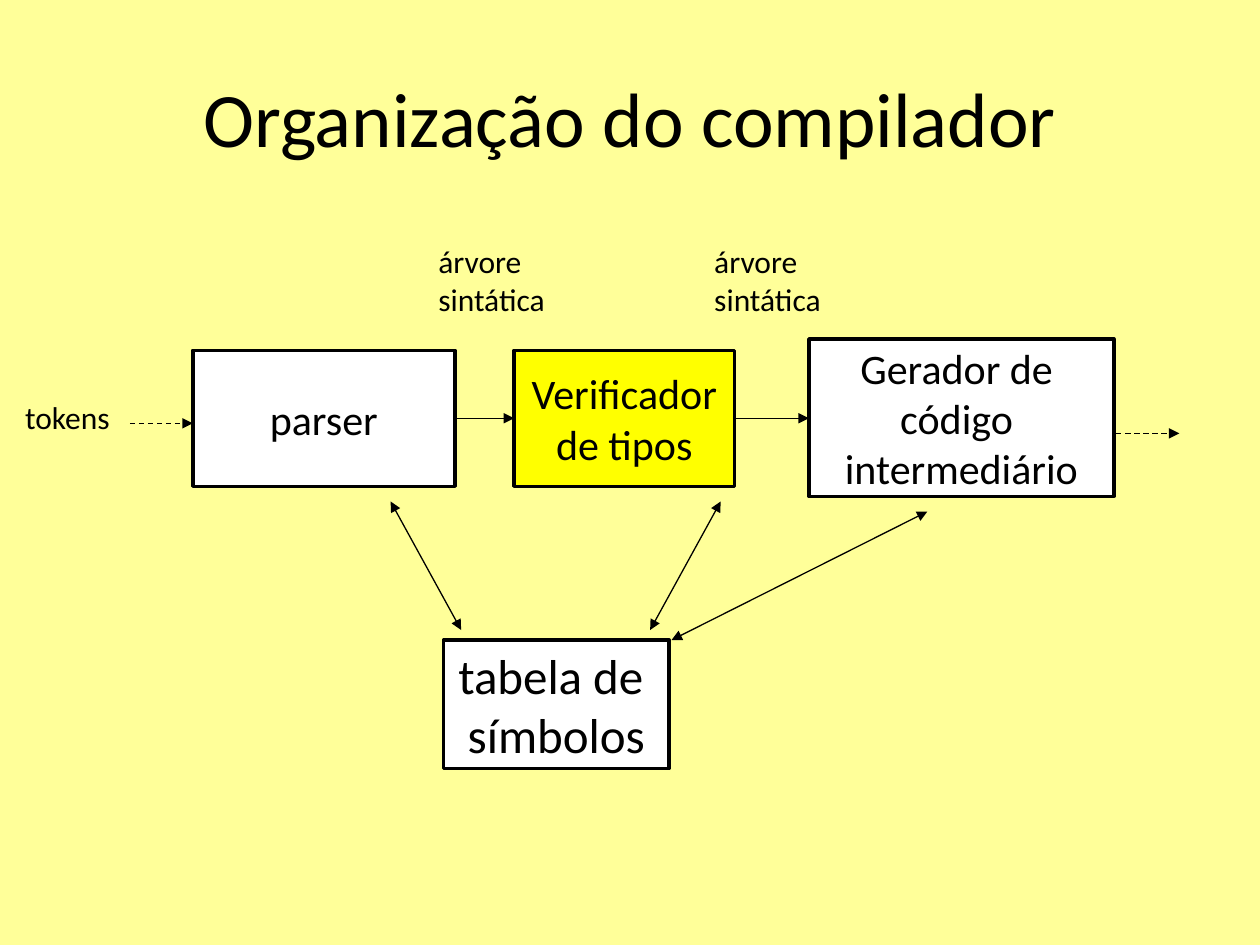
"""Build the slide on how the compiler is organised."""
from lxml import etree
from pptx import Presentation
from pptx import util as u
from pptx.dml.color import RGBColor
from pptx.enum import dml, shapes, text
from pptx.oxml import ns

BLACK = RGBColor(0x00, 0x00, 0x00)
WHITE = RGBColor(0xFF, 0xFF, 0xFF)
YELLOW = RGBColor(0xFF, 0xFF, 0x00)
PALE_YELLOW = RGBColor(0xFF, 0xFF, 0x99)
CENTER, LEFT = text.PP_ALIGN.CENTER, text.PP_ALIGN.LEFT
MIDDLE, TOP = text.MSO_ANCHOR.MIDDLE, text.MSO_ANCHOR.TOP


def write(box, words, size, align=CENTER, anchor=MIDDLE, wrap=False):
    frame = box.text_frame
    frame.text = words
    frame.word_wrap = wrap
    frame.vertical_anchor = anchor
    for para in frame.paragraphs:
        para.alignment = align
        para.font.name = "Calibri"
        para.font.size = u.Pt(size)
        para.font.color.rgb = BLACK


def add_arrow(page, start, end, ends=("tailEnd",), dashed=False):
    points = [u.Inches(value) for value in (*start, *end)]
    arrow = page.shapes.add_connector(shapes.MSO_CONNECTOR.STRAIGHT, *points)
    arrow.line.color.rgb = BLACK
    arrow.line.width = u.Pt(0.75)
    if dashed:
        arrow.line.dash_style = dml.MSO_LINE.DASH
    outline = arrow.line._get_or_add_ln()
    for end_name in ends:
        etree.SubElement(outline, ns.qn(f"a:{end_name}"), type="triangle")
    etree.SubElement(arrow._element.spPr, ns.qn("a:effectLst"))


deck = Presentation()
deck.slide_width, deck.slide_height = u.Inches(10), u.Inches(7.5)
page = deck.slides.add_slide(deck.slide_layouts[6])
page.background.fill.solid()
page.background.fill.fore_color.rgb = PALE_YELLOW

labels = [
    ("Organização do compilador", (0.5, 0.3, 9, 1.25), 44, CENTER, MIDDLE, True),
    ("tokens", (0, 3.11, 1.07, 0.5), 18, CENTER, TOP, False),
    ("árvore\vsintática", (3.38, 1.87, 1.31, 0.71), 18, LEFT, TOP, True),
    ("árvore\vsintática", (5.57, 1.87, 1.31, 0.71), 18, LEFT, TOP, True),
]
for words, place, size, align, anchor, wrap in labels:
    label = page.shapes.add_textbox(*[u.Inches(value) for value in place])
    write(label, words, size, align, anchor, wrap)

stages = [
    ("parser", (1.53, 2.78, 2.08, 1.08), 24, WHITE),
    ("Verificador\nde tipos", (4.08, 2.78, 1.75, 1.08), 24, YELLOW),
    ("Gerador de \ncódigo \nintermediário", (6.42, 2.69, 2.42, 1.25), 24, WHITE),
    ("tabela de \vsímbolos", (3.52, 5.08, 1.79, 1.02), 28, WHITE),
]
for words, place, size, color in stages:
    stage = page.shapes.add_shape(
        shapes.MSO_SHAPE.RECTANGLE, *[u.Inches(value) for value in place]
    )
    stage.shadow.inherit = False
    stage.fill.solid()
    stage.fill.fore_color.rgb = color
    stage.line.color.rgb = BLACK
    stage.line.width = u.Pt(2)
    write(stage, words, size)

for left, right, height, dashed in [
    (1.03, 1.53, 3.36, True),
    (3.61, 4.08, 3.32, False),
    (5.83, 6.42, 3.32, False),
    (8.86, 9.36, 3.44, True),
]:
    add_arrow(page, (left, height), (right, height), dashed=dashed)

for table_end, stage_end in [
    ((3.66, 5), (3.1, 3.98)),
    ((5.16, 5), (5.72, 3.98)),
    ((5.33, 5.08), (7.36, 4.06)),
]:
    add_arrow(page, table_end, stage_end, ends=("headEnd", "tailEnd"))

deck.save("out.pptx")
